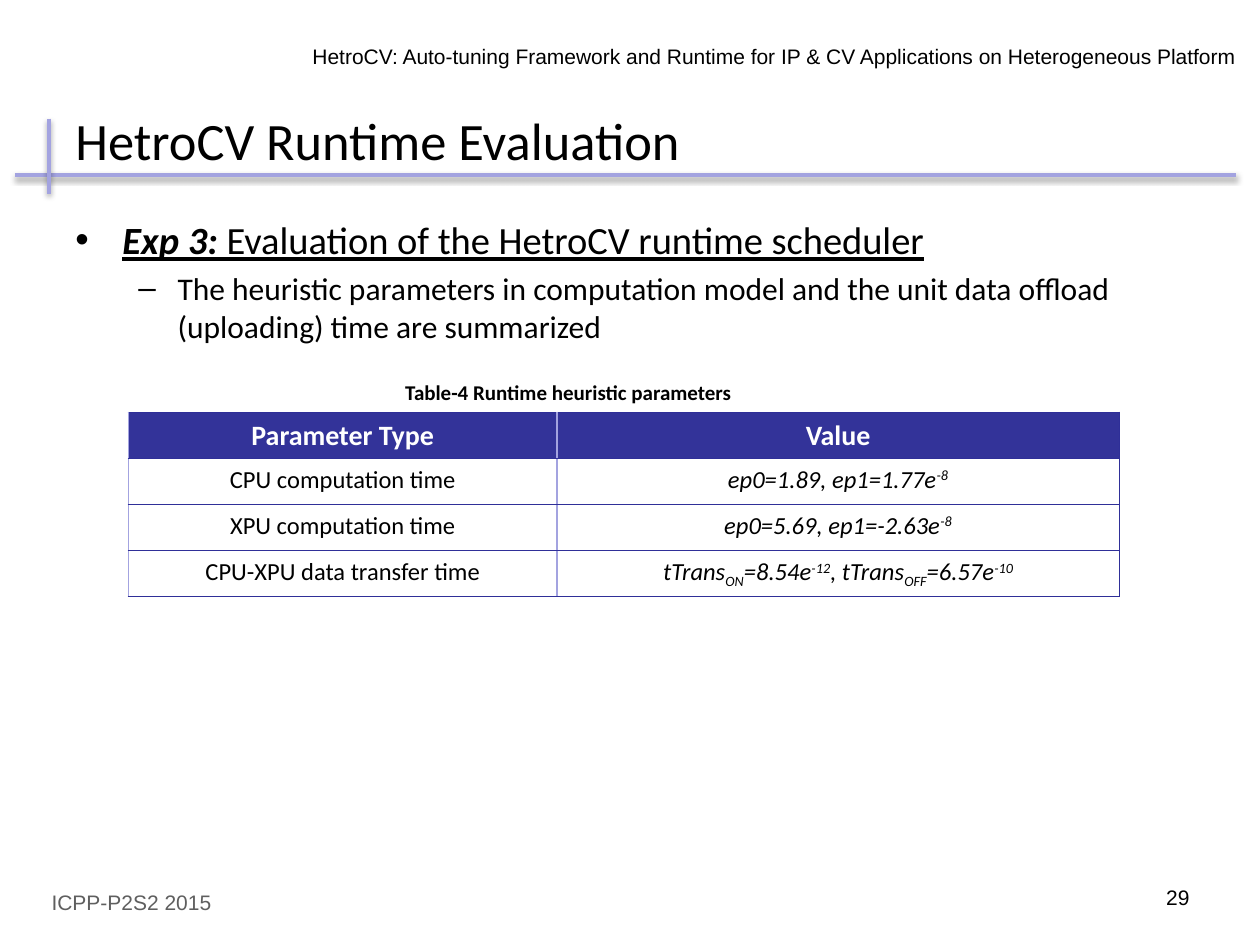
"""Build the runtime evaluation slide with its heuristic parameter table."""
from typing import NamedTuple

from lxml.etree import SubElement
from pptx import Presentation
from pptx.dml.color import RGBColor
from pptx.enum.shapes import MSO_CONNECTOR
from pptx.enum.text import MSO_ANCHOR, PP_ALIGN
from pptx.oxml.ns import qn
from pptx.util import Cm, Pt

BLACK, WHITE, GREY = "000000", "FFFFFF", "5F5F5F"
HEADER_BLUE, BORDER_BLUE, LAVENDER = "333399", "2F2F98", "A3A3E0"
SUPERSCRIPT, SUBSCRIPT = 30, -25


class Span(NamedTuple):
    text: str
    bold: bool = False
    italic: bool = False
    underline: bool = False
    baseline: int = 0


class Label(NamedTuple):
    text: str
    left: float
    top: float
    width: float
    height: float = 0.76
    size: float = 12
    font: str = "Arial"
    color: str = BLACK
    bold: bool = False
    align: PP_ALIGN = PP_ALIGN.LEFT
    wrap: bool = True


class Bullet(NamedTuple):
    spans: list[Span]
    symbol: str
    size: float
    margin: float
    indent: float
    space_before: float


class Rule(NamedTuple):
    start: tuple[float, float]
    end: tuple[float, float]


def math_span(text: str, baseline: int = 0) -> Span:
    return Span(text, italic=True, baseline=baseline)


LABELS = [
    Label("ICPP-P2S2 2015", 0.79, 17.81, 6.35, color=GREY),
    Label("HetroCV: Auto-tuning Framework and Runtime for IP & CV Applications "
          "on Heterogeneous Platform", 6.05, 0.76, 19.2, wrap=False),
    Label("29", 18.11, 17.7, 6.12, align=PP_ALIGN.RIGHT),
    Label("HetroCV Runtime Evaluation", 1.27, 1.7, 22.86, 2.24, 30, "Calibri"),
    Label("Table-4 Runtime heuristic parameters", 7.92, 7.52, 7.34,
          font="Calibri", bold=True, wrap=False),
]
BULLETS = [
    Bullet([Span("Exp 3:", True, True, True),
            Span(" Evaluation of the HetroCV runtime scheduler", underline=True)],
           "•", 22, 0.95, -0.95, 0),
    Bullet([Span("The heuristic parameters in computation model and the unit data "
                 "offload (uploading) time are summarized")],
           "–", 18, 2.06, -0.79, 3.6),
]
RULES = [Rule((0.3, 3.53), (24.92, 3.53)), Rule((0.99, 2.39), (0.99, 3.91))]
COLUMN_WIDTHS = [8.64, 11.33]
ROW_HEIGHT = 0.93
TABLE_ROWS = [
    [[Span("Parameter Type", bold=True)], [Span("Value", bold=True)]],
    [[Span("CPU computation time")],
     [math_span("ep0=1.89, ep1=1.77e"), math_span("-8", SUPERSCRIPT)]],
    [[Span("XPU computation time")],
     [math_span("ep0=5.69, ep1=-2.63e"), math_span("-8", SUPERSCRIPT)]],
    [[Span("CPU-XPU data transfer time")],
     [math_span("tTrans"), math_span("ON", SUBSCRIPT), math_span("=8.54e"),
      math_span("-12", SUPERSCRIPT), math_span(", tTrans"),
      math_span("OFF", SUBSCRIPT), math_span("=6.57e"),
      math_span("-10", SUPERSCRIPT)]],
]


def rgb(color: str) -> RGBColor:
    return RGBColor.from_string(color)


def write_spans(paragraph, spans: list[Span], size: float, font: str, color: str) -> None:
    for span in spans:
        run = paragraph.add_run()
        run.text = span.text
        run.font.size, run.font.name = Pt(size), font
        run.font.color.rgb = rgb(color)
        run.font.bold, run.font.italic = span.bold, span.italic
        run.font.underline = span.underline
        if span.baseline:
            run.font._element.set("baseline", str(span.baseline * 1000))


def add_frame(slide, left: float, top: float, width: float, height: float):
    shape = slide.shapes.add_textbox(Cm(left), Cm(top), Cm(width), Cm(height))
    shape.text_frame.word_wrap = True
    return shape.text_frame


def add_label(slide, label: Label) -> None:
    text_frame = add_frame(slide, label.left, label.top, label.width, label.height)
    text_frame.word_wrap = label.wrap
    text_frame.vertical_anchor = MSO_ANCHOR.MIDDLE
    paragraph = text_frame.paragraphs[0]
    paragraph.alignment = label.align
    write_spans(paragraph, [Span(label.text, label.bold)], label.size, label.font, label.color)


def add_bullets(slide, bullets: list[Bullet]) -> None:
    text_frame = add_frame(slide, 1.27, 4.24, 22.86, 12.6)
    for index, bullet in enumerate(bullets):
        paragraph = text_frame.add_paragraph() if index else text_frame.paragraphs[0]
        paragraph.level = index
        paragraph.space_before = Pt(bullet.space_before)
        properties = paragraph._p.get_or_add_pPr()
        properties.set("marL", str(Cm(bullet.margin)))
        properties.set("indent", str(Cm(bullet.indent)))
        SubElement(properties, qn("a:buFont"), typeface="Arial")
        SubElement(properties, qn("a:buChar"), char=bullet.symbol)
        write_spans(paragraph, bullet.spans, bullet.size, "Calibri", BLACK)


def add_rule(slide, rule: Rule) -> None:
    connector = slide.shapes.add_connector(
        MSO_CONNECTOR.STRAIGHT, *map(Cm, rule.start), *map(Cm, rule.end))
    connector.line.color.rgb = rgb(LAVENDER)
    connector.line.width = Pt(2)
    effects = SubElement(connector._element.spPr, qn("a:effectLst"))
    shadow = SubElement(effects, qn("a:outerShdw"), blurRad=str(Pt(3.1)),
                        dist=str(Pt(1.6)), dir="5400000", rotWithShape="0")
    shadow_color = SubElement(shadow, qn("a:srgbClr"), val=BLACK)
    SubElement(shadow_color, qn("a:alpha"), val="38000")


def set_border(cell, side: str, color: str, width: float) -> None:
    line = SubElement(cell._tc.get_or_add_tcPr(), qn(f"a:ln{side}"), w=str(Pt(width)))
    fill = SubElement(line, qn("a:solidFill"))
    SubElement(fill, qn("a:srgbClr"), val=color)


def add_parameter_table(slide) -> None:
    row_count, column_count = len(TABLE_ROWS), len(COLUMN_WIDTHS)
    table = slide.shapes.add_table(
        row_count, column_count, Cm(2.59), Cm(8.31),
        Cm(sum(COLUMN_WIDTHS)), Cm(ROW_HEIGHT * row_count)).table
    table.horz_banding = False
    for column, width in zip(table.columns, COLUMN_WIDTHS):
        column.width = Cm(width)
    light, dark = (LAVENDER, 1), (BORDER_BLUE, 0.75)
    for row_index, row in enumerate(TABLE_ROWS):
        table.rows[row_index].height = Cm(ROW_HEIGHT)
        for column_index, spans in enumerate(row):
            cell = table.cell(row_index, column_index)
            right = dark if column_index == column_count - 1 else light
            for side, border in zip("LRTB", (light, right, dark, dark)):
                set_border(cell, side, *border)
            if row_index == 0:
                cell.fill.solid()
                cell.fill.fore_color.rgb = rgb(HEADER_BLUE)
            else:
                cell.fill.background()
            paragraph = cell.text_frame.paragraphs[0]
            paragraph.alignment = PP_ALIGN.CENTER
            size, color = (14, BLACK) if row_index else (16, WHITE)
            write_spans(paragraph, spans, size, "Calibri", color)


def main() -> None:
    presentation = Presentation()
    presentation.slide_width, presentation.slide_height = Cm(25.4), Cm(19.05)
    slide = presentation.slides.add_slide(presentation.slide_layouts[6])
    for label in LABELS:
        add_label(slide, label)
    add_bullets(slide, BULLETS)
    for rule in RULES:
        add_rule(slide, rule)
    add_parameter_table(slide)
    presentation.save("out.pptx")


if __name__ == "__main__":
    main()
